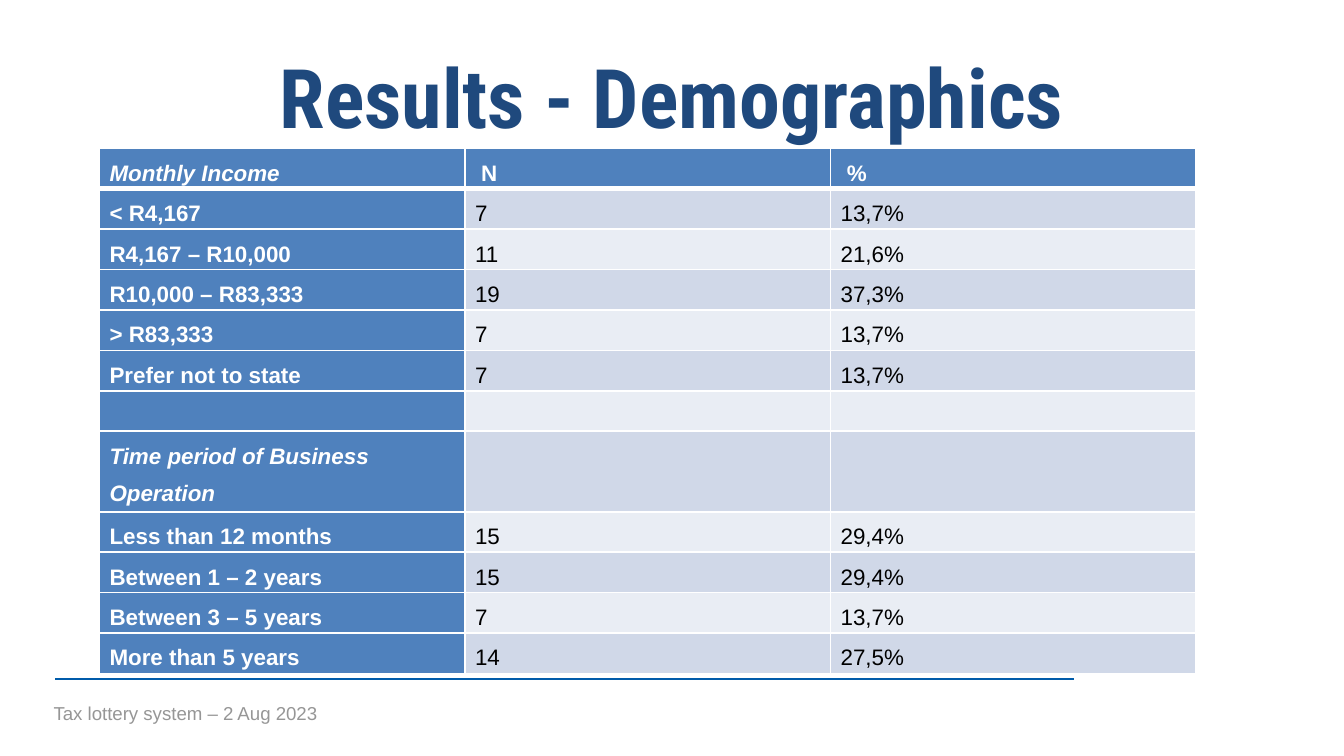
from lxml import etree
from pptx import Presentation
from pptx.dml.color import RGBColor
from pptx.enum.shapes import MSO_CONNECTOR
from pptx.enum.text import MSO_ANCHOR, MSO_AUTO_SIZE, PP_ALIGN
from pptx.oxml.ns import qn
from pptx.util import Emu, Pt

STRAIGHT = MSO_CONNECTOR.STRAIGHT
TOP, MIDDLE = MSO_ANCHOR.TOP, MSO_ANCHOR.MIDDLE
GROW = MSO_AUTO_SIZE.SHAPE_TO_FIT_TEXT
LEFT, CENTER = PP_ALIGN.LEFT, PP_ALIGN.CENTER
TITLE_ONLY = 5
EMU_PER_PX = 4572  # 200 px to the inch

DEMOGRAPHICS = [
    ("Monthly Income", " N", " %"),
    ("< R4,167", "7", "13,7%"),
    ("R4,167 – R10,000", "11", "21,6%"),
    ("R10,000 – R83,333", "19", "37,3%"),
    ("> R83,333", "7", "13,7%"),
    ("Prefer not to state", "7", "13,7%"),
    ("", "", ""),
    ("Time period of Business Operation", "", ""),
    ("Less than 12 months", "15", "29,4%"),
    ("Between 1 – 2 years", "15", "29,4%"),
    ("Between 3 – 5 years", "7", "13,7%"),
    ("More than 5 years", "14", "27,5%"),
]
GROUP_HEADINGS = ("Monthly Income", "Time period of Business Operation")


def px(length):
    return Emu(length * EMU_PER_PX)


def color(value):
    return RGBColor.from_string(value)


class SlideBuilder:
    BODY_FONT, TITLE_FONT = "Arial", "Roboto Condensed"
    NAVY, RULE_BLUE, GREY = "1F497D", "005BAA", "969696"
    HEADER_FILL, BANDS = "4F81BD", ("E9EDF4", "D0D8E8")
    WHITE, BLACK = "FFFFFF", "000000"

    def __init__(self, slide):
        self.slide = slide

    def add_run(self, paragraph, text, size, font, fill, bold=False, italic=False):
        run = paragraph.add_run()
        run.text = text
        run.font.size, run.font.name = Pt(size), font
        run.font.bold, run.font.italic = bold, italic
        run.font.color.rgb = color(fill)

    def set_frame(self, frame, anchor, side, edge):
        frame.word_wrap = True
        frame.auto_size = GROW
        frame.vertical_anchor = anchor
        frame.margin_left = frame.margin_right = px(side)
        frame.margin_top = frame.margin_bottom = px(edge)

    def title(self, text, left, top, width, height):
        heading = self.slide.shapes.title
        heading.left, heading.top = px(left), px(top)
        heading.width, heading.height = px(width), px(height)
        self.set_frame(heading.text_frame, MIDDLE, 10, 4)
        paragraph = heading.text_frame.paragraphs[0]
        paragraph.alignment = CENTER
        self.add_run(paragraph, text, 44, self.TITLE_FONT, self.NAVY, bold=True)

    def footer(self, text, left, top, width, height):
        box = self.slide.shapes.add_textbox(px(left), px(top), px(width), px(height))
        self.set_frame(box.text_frame, TOP, 20, 10)
        paragraph = box.text_frame.paragraphs[0]
        paragraph.alignment = LEFT
        self.add_run(paragraph, text, 10, self.BODY_FONT, self.GREY)

    def rule(self, left, right, y):
        line = self.slide.shapes.add_connector(STRAIGHT, px(left), px(y), px(right), px(y))
        line.line.color.rgb = color(self.RULE_BLUE)
        line.line.width = Pt(1)
        etree.SubElement(line._element.spPr, qn("a:effectLst"))

    def cell_borders(self, cell, top, bottom):
        """Draw white borders; they must come before the cell's fill."""
        properties = cell._tc.get_or_add_tcPr()
        for side, width in (("L", 1), ("R", 1), ("T", top), ("B", bottom)):
            border = etree.SubElement(properties, qn(f"a:ln{side}"), w=str(Pt(width)))
            fill = etree.SubElement(border, qn("a:solidFill"))
            etree.SubElement(fill, qn("a:srgbClr"), val=self.WHITE)

    def table(self, rows, left, top, column_width, row_height):
        columns = len(rows[0])
        grid = self.slide.shapes.add_table(
            len(rows), columns, px(left), px(top),
            px(column_width * columns), px(row_height * len(rows))).table
        for column in grid.columns:
            column.width = px(column_width)
        for r, values in enumerate(rows):
            grid.rows[r].height = px(row_height)
            for c, value in enumerate(values):
                self.table_cell(grid.cell(r, c), value, r, c)

    def table_cell(self, cell, value, row, column):
        heading = row == 0 or column == 0
        self.cell_borders(cell, 3 if row == 1 else 1, 3 if row == 0 else 1)
        cell.fill.solid()
        cell.fill.fore_color.rgb = color(self.HEADER_FILL if heading else self.BANDS[row % 2])
        cell.margin_left = cell.margin_right = px(15)
        cell.margin_top = cell.margin_bottom = 0
        if value:
            paragraph = cell.text_frame.paragraphs[0]
            paragraph.line_spacing = 1.5
            paragraph.space_after = Pt(8)
            self.add_run(paragraph, value, 12, self.BODY_FONT,
                         self.WHITE if heading else self.BLACK,
                         bold=heading, italic=value in GROUP_HEADINGS)


def main():
    deck = Presentation()
    deck.slide_width, deck.slide_height = px(2000), px(1125)
    builder = SlideBuilder(deck.slides.add_slide(deck.slide_layouts[TITLE_ONLY]))
    builder.rule(82, 1598, 1011)
    builder.footer("Tax lottery system – 2 Aug 2023", 60, 1035, 1538, 54)
    builder.title("Results - Demographics", 251, 63, 1498, 158)
    builder.table(DEMOGRAPHICS, 148, 221, 544, 60)
    deck.save("out.pptx")


if __name__ == "__main__":
    main()
